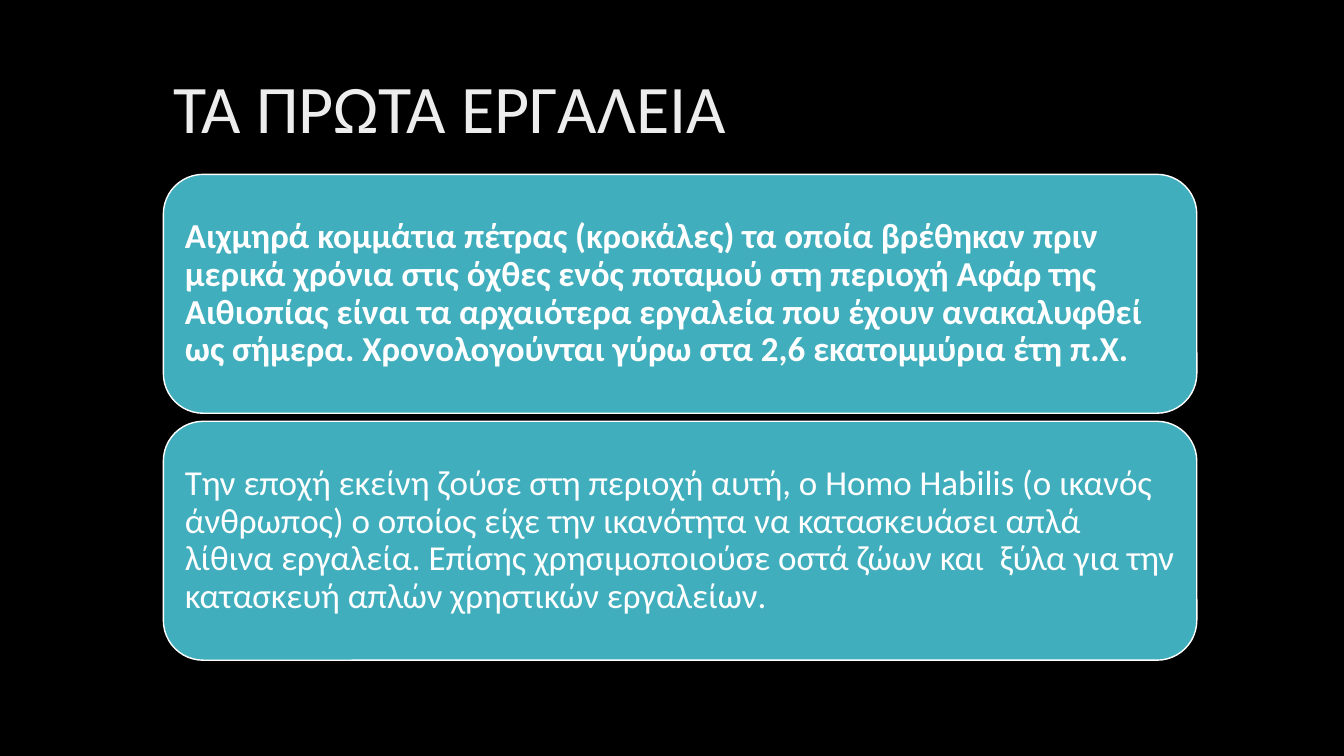
from dataclasses import dataclass

from pptx import Presentation
from pptx.dml.color import RGBColor
from pptx.enum.shapes import MSO_SHAPE
from pptx.enum.text import MSO_ANCHOR, MSO_AUTO_SIZE, PP_ALIGN
from pptx.util import Inches, Pt

ROUNDED = MSO_SHAPE.ROUNDED_RECTANGLE
MIDDLE = MSO_ANCHOR.MIDDLE
LEFT = PP_ALIGN.LEFT
NO_AUTOFIT = MSO_AUTO_SIZE.NONE
TITLE_ONLY = 5


@dataclass(frozen=True)
class Theme:
    font: str = "Calibri"
    background: RGBColor = RGBColor(0x00, 0x00, 0x00)
    title: RGBColor = RGBColor(0xED, 0xED, 0xED)
    card: RGBColor = RGBColor(0x41, 0xAE, 0xBD)
    light: RGBColor = RGBColor(0xFF, 0xFF, 0xFF)
    title_size: float = 48.6
    body_size: float = 25


THEME = Theme()

TITLE = "ΤΑ ΠΡΩΤΑ ΕΡΓΑΛΕΙΑ"
CARDS = [
    ("Αιχμηρά κομμάτια πέτρας (κροκάλες) τα οποία βρέθηκαν πριν μερικά "
     "χρόνια στις όχθες ενός ποταμού στη περιοχή Αφάρ της Αιθιοπίας είναι "
     "τα αρχαιότερα εργαλεία που έχουν ανακαλυφθεί ως σήμερα. "
     "Χρονολογούνται γύρω στα 2,6 εκατομμύρια έτη π.Χ.", True),
    ("Την εποχή εκείνη ζούσε στη περιοχή αυτή, ο Homo Habilis (ο "
     "ικανός  άνθρωπος) ο οποίος είχε την ικανότητα να κατασκευάσει απλά "
     "λίθινα εργαλεία. Επίσης χρησιμοποιούσε οστά ζώων και  ξύλα για την "
     "κατασκευή απλών χρηστικών εργαλείων.", False),
]

CONTENT_LEFT = 1.62
CARD_TOP = 1.73
CARD_WIDTH = 10.25
CARD_HEIGHT = 2.37
CARD_GAP = 0.08


def write_text(box, text, *, size, color, bold=False, margin=0.1):
    frame = box.text_frame
    frame.word_wrap = True
    frame.auto_size = NO_AUTOFIT
    frame.vertical_anchor = MIDDLE
    frame.margin_left = frame.margin_right = Inches(0.1)
    frame.margin_top = frame.margin_bottom = Inches(margin)
    para = frame.paragraphs[0]
    para.alignment = LEFT
    para.line_spacing = 0.9
    span = para.add_run()
    span.text = text
    span.font.name = THEME.font
    span.font.size = Pt(size)
    span.font.bold = bold
    span.font.color.rgb = color


def place_title(page, text):
    title = page.shapes.title
    title.left, title.top = Inches(CONTENT_LEFT), Inches(0.75)
    title.width, title.height = Inches(10.96), Inches(0.72)
    write_text(title, text, size=THEME.title_size, color=THEME.title, margin=0.05)


def add_card(page, top, text, bold):
    card = page.shapes.add_shape(
        ROUNDED, Inches(CONTENT_LEFT), Inches(top),
        Inches(CARD_WIDTH), Inches(CARD_HEIGHT))
    card.shadow.inherit = False
    card.fill.solid()
    card.fill.fore_color.rgb = THEME.card
    card.line.color.rgb = THEME.light
    card.line.width = Pt(1)
    write_text(card, text, size=THEME.body_size, color=THEME.light, bold=bold)


def main():
    deck = Presentation()
    deck.slide_width, deck.slide_height = Inches(13.33), Inches(7.5)
    page = deck.slides.add_slide(deck.slide_layouts[TITLE_ONLY])
    page.background.fill.solid()
    page.background.fill.fore_color.rgb = THEME.background
    place_title(page, TITLE)
    for index, (text, bold) in enumerate(CARDS):
        add_card(page, CARD_TOP + index * (CARD_HEIGHT + CARD_GAP), text, bold)
    deck.save("out.pptx")


if __name__ == "__main__":
    main()
